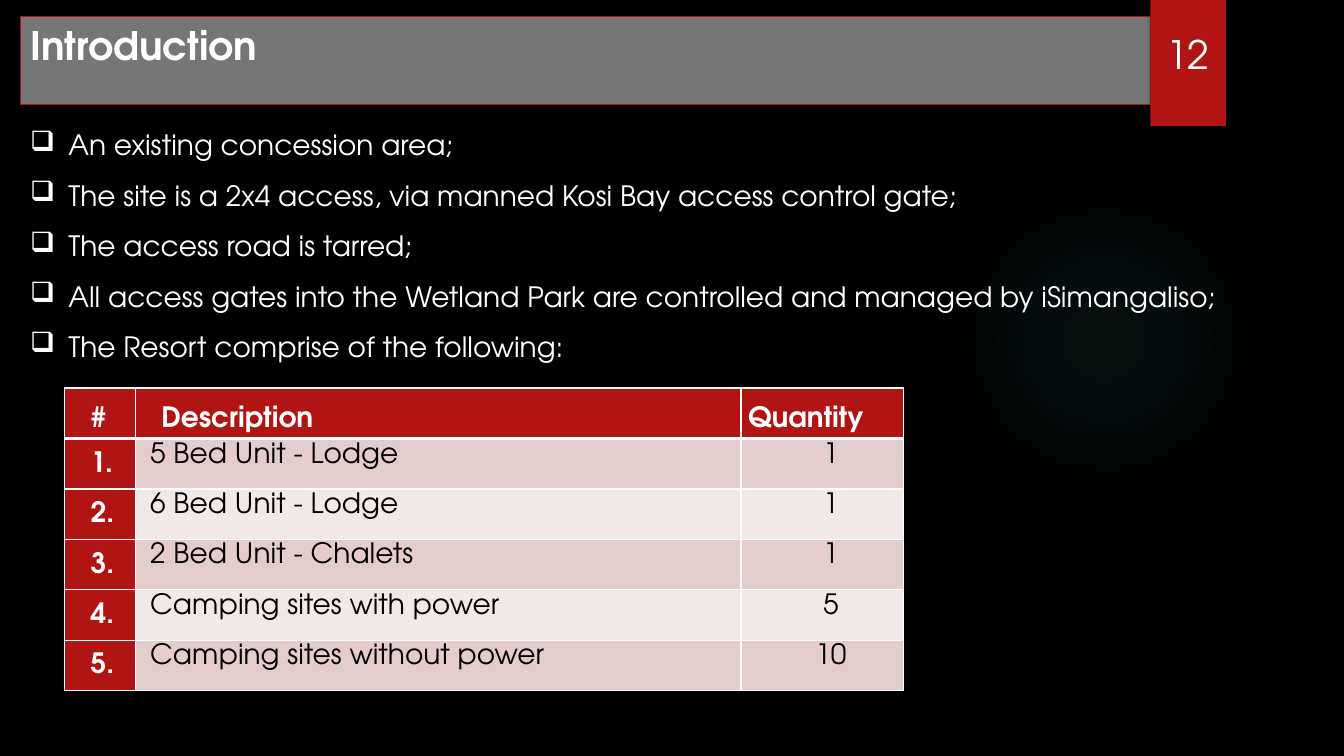
from pptx import Presentation
from pptx.dml.color import RGBColor
from pptx.enum.shapes import MSO_SHAPE as Shape
from pptx.enum.text import MSO_ANCHOR as Anchor, PP_ALIGN as Align
from pptx.oxml import parse_xml
from pptx.oxml.ns import nsdecls
from pptx.util import Inches, Pt

COLORS = {"black": "000000", "white": "FFFFFF", "red": "B01513", "grey": "767676",
          "glow": "50B9C1", "pink": "E4CCCC", "pale": "F2E8E7"}
FONT = "TeX Gyre Adventor"
POINTS = [
    "An existing concession area;",
    "The site is a 2x4 access, via manned Kosi Bay access control gate;",
    "The access road is tarred;",
    "All access gates into the Wetland Park are controlled and managed by iSimangaliso;",
    "The Resort comprise of the following:",
]
UNITS = [
    ("5 Bed Unit - Lodge", "1"),
    ("6 Bed Unit - Lodge", "1"),
    ("2 Bed Unit - Chalets", "1"),
    ("Camping sites with power", "5"),
    ("Camping sites without power", "10"),
]
HEAD = {"line_spacing": 1.5}
BODY = {"line_spacing": 1.15, "space_after": Pt(8)}


def rgb(name):
    return RGBColor.from_string(COLORS[name])


def element(tag, attributes="", inner=""):
    return parse_xml(f"<a:{tag} {nsdecls('a')} {attributes}>{inner}</a:{tag}>")


def color_xml(name, alpha=100):
    return f'<a:srgbClr val="{COLORS[name]}"><a:alpha val="{alpha * 1000}"/></a:srgbClr>'


class SlideBuilder:
    def __init__(self, deck):
        self.page = deck.slides.add_slide(deck.slide_layouts[5])
        background = self.page.background.fill
        background.solid()
        background.fore_color.rgb = rgb("black")

    def add_text(self, para, text, size=20, color="white", bold=False, **formats):
        for name, value in formats.items():
            setattr(para, name, value)
        span = para.add_run()
        span.text = text
        for name, value in {"name": FONT, "size": Pt(size), "bold": bold}.items():
            setattr(span.font, name, value)
        span.font.color.rgb = rgb(color)

    def place(self, box, left, top, width, height):
        for name, value in zip(("left", "top", "width", "height"), (left, top, width, height)):
            setattr(box, name, Inches(value))

    def title(self, text, *bounds):
        box = self.page.shapes.title
        self.place(box, *bounds)
        box.fill.solid()
        box.fill.fore_color.rgb = rgb("grey")
        box.line.color.rgb = rgb("red")
        box.line.width = Pt(0.75)
        box.text_frame.vertical_anchor = Anchor.TOP
        self.add_text(box.text_frame.paragraphs[0], text, 28, bold=True, alignment=Align.LEFT)

    def shape(self, kind, *bounds):
        box = self.page.shapes.add_shape(kind, *map(Inches, bounds))
        box.shadow.inherit = False
        box.line.fill.background()
        return box

    def glow(self, *bounds):
        box = self.shape(Shape.OVAL, *bounds)
        stops = "".join(f'<a:gs pos="{pos * 1000}">{color_xml("glow", alpha)}</a:gs>'
                        for pos, alpha in ((0, 7), (36, 6), (69, 0)))
        center = '<a:fillToRect l="50000" t="50000" r="50000" b="50000"/>'
        box._element.spPr.insert(2, element(
            "gradFill", inner=f'<a:gsLst>{stops}</a:gsLst><a:path path="circle">{center}</a:path>'))

    def tab(self, *bounds):
        box = self.shape(Shape.RECTANGLE, *bounds)
        box.fill.solid()
        box.fill.fore_color.rgb = rgb("red")
        box._element.spPr.effectLst.append(element(
            "outerShdw", f'blurRad="{Pt(3)}" dist="{Pt(2)}" dir="5400000"', color_xml("black", 45)))

    def text_box(self, *bounds):
        frame = self.page.shapes.add_textbox(*map(Inches, bounds)).text_frame
        frame.word_wrap = True
        return frame

    def page_number(self, text, *bounds):
        frame = self.text_box(*bounds)
        frame.vertical_anchor = Anchor.BOTTOM
        self.add_text(frame.paragraphs[0], text, 28, alignment=Align.CENTER)

    def bullets(self, points, *bounds):
        frame = self.text_box(*bounds)
        for index, point in enumerate(points):
            para = frame.add_paragraph() if index else frame.paragraphs[0]
            props = para._p.get_or_add_pPr()
            props.set("marL", str(Inches(0.38)))
            props.set("indent", str(Inches(-0.38)))
            props.append(element("buChar", 'char="❑"'))
            stops = "".join(f'<a:tab pos="{Inches(pos)}" algn="l"/>' for pos in (0.5, 0.59))
            props.append(element("tabLst", inner=stops))
            self.add_text(para, point, alignment=Align.JUSTIFY, space_after=Pt(12))

    def cell(self, cell, text, fill, indent, borders, anchor=Anchor.TOP, **formats):
        margins = {"margin_left": Inches(0.07), "margin_right": Inches(0.07),
                   "margin_top": 0, "margin_bottom": 0, "vertical_anchor": anchor}
        for name, value in margins.items():
            setattr(cell, name, value)
        cell.fill.solid()
        cell.fill.fore_color.rgb = rgb(fill)
        for index, (side, width) in enumerate(zip("LRTB", borders)):
            line = f"<a:solidFill>{color_xml('white')}</a:solidFill>"
            cell._tc.tcPr.insert(index, element(f"ln{side}", f'w="{Pt(width)}"', line))
        para = cell.text_frame.paragraphs[0]
        para._p.get_or_add_pPr().set("marL", str(Inches(indent)))
        self.add_text(para, text, **formats)

    def table(self, header, units, widths, left, top, row_height):
        count = len(units) + 1
        table = self.page.shapes.add_table(
            count, len(widths), Inches(left), Inches(top),
            Inches(sum(widths)), Inches(row_height * count)).table
        for column, width in zip(table.columns, widths):
            column.width = Inches(width)
        for col, (text, indent) in enumerate(zip(header, (0.19, 0.19, 0))):
            self.cell(table.cell(0, col), text, "red", indent, (1, 1, 1, 3),
                      Anchor.MIDDLE, bold=True, **HEAD)
        for row, (name, quantity) in enumerate(units, 1):
            fill = "pink" if row % 2 else "pale"
            borders = (1, 1, 3 if row == 1 else 1, 1)
            self.cell(table.cell(row, 0), f"{row}.", "red", 0.19, borders, bold=True, **HEAD)
            self.cell(table.cell(row, 1), name, fill, 0.08, borders, color="black", **BODY)
            self.cell(table.cell(row, 2), quantity, fill, 0.17, borders, color="black",
                      alignment=Align.CENTER, **BODY)


def main():
    deck = Presentation()
    deck.slide_width, deck.slide_height = Inches(13.33), Inches(7.5)
    builder = SlideBuilder(deck)
    builder.glow(9.41, 1.83, 3.08, 3.08)
    builder.tab(11.41, 0, 0.75, 1.25)
    builder.title("Introduction", 0.2, 0.16, 11.21, 0.88)
    builder.page_number("12", 11.32, 0.32, 0.92, 0.5)
    builder.bullets(POINTS, 0.2, 1.22, 12.41, 2.46)
    builder.table(("#", "Description", "Quantity"), UNITS, (0.7, 6.01, 1.61), 0.64, 3.85, 0.5)
    deck.save("out.pptx")


if __name__ == "__main__":
    main()
